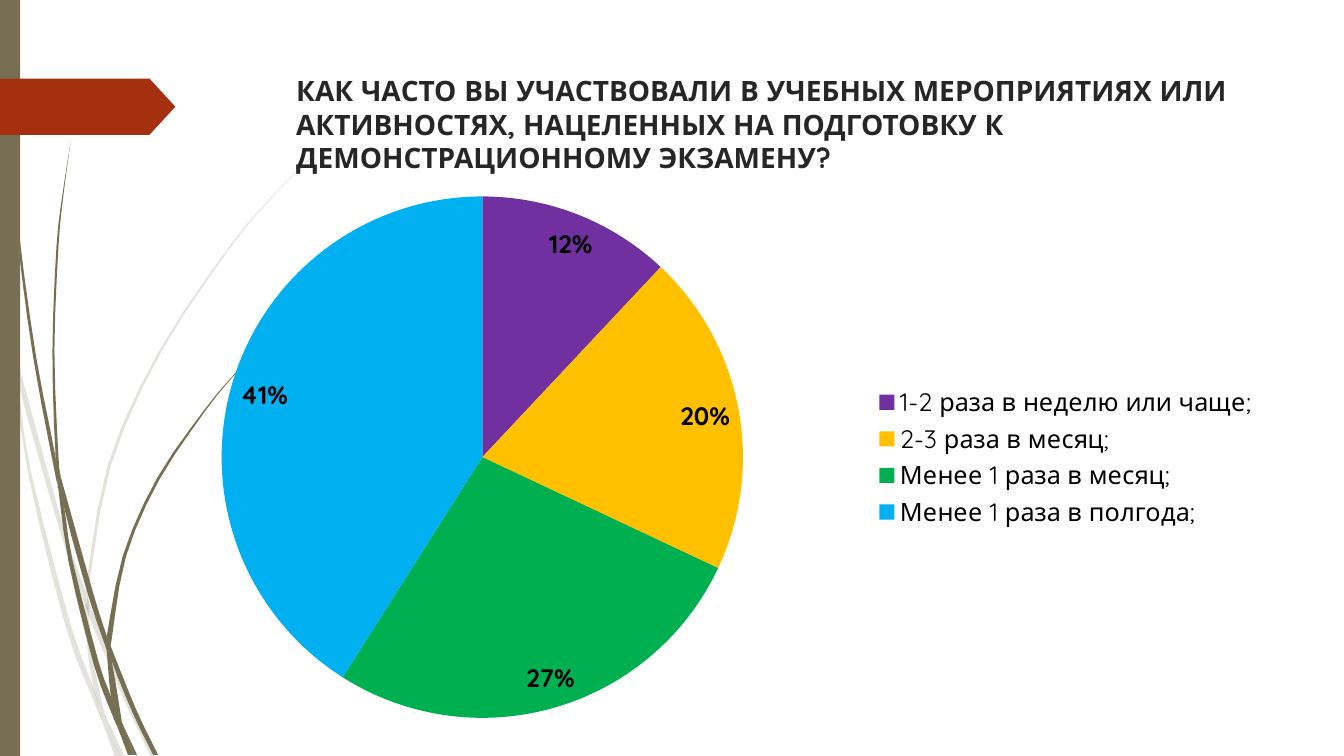
import collections

import lxml.etree
import pptx
import pptx.chart.data
import pptx.dml.color
import pptx.enum.chart
import pptx.enum.shapes
import pptx.enum.text
import pptx.oxml.ns
import pptx.util

Cm = pptx.util.Cm
Pt = pptx.util.Pt
RGB = pptx.dml.color.RGBColor.from_string
Box = collections.namedtuple("Box", "left top width height")
Theme = collections.namedtuple("Theme", "font olive rust heading body slices title_size chart_size")

THEME = Theme(
    font="Quicksand", olive="766F54", rust="A53010", heading="262626", body="000000",
    slices=("7030A0", "FFC000", "00B050", "00B0F0"),
    title_size=Pt(20), chart_size=Pt(18),
)
TITLE = ("КАК ЧАСТО ВЫ УЧАСТВОВАЛИ В УЧЕБНЫХ МЕРОПРИЯТИЯХ ИЛИ АКТИВНОСТЯХ, "
         "НАЦЕЛЕННЫХ НА ПОДГОТОВКУ К ДЕМОНСТРАЦИОННОМУ ЭКЗАМЕНУ?")
ANSWERS = {
    "1-2 раза в неделю или чаще;": 12,
    "2-3 раза в месяц;": 20,
    "Менее 1 раза в месяц;": 27,
    "Менее 1 раза в полгода;": 41,
}
GRID_ROWS = 7.5
CURVE_STEPS = 3
PALE_BLADES = (
    ([(0, 2.99), (.1, 3.44), (.11, 3.5)], [(0, 2.82), (.09, 3.22), (.11, 3.5)]),
    ([(.14, 3.45), (.17, 3.76), (.58, 5.22), (.84, 5.99)], [(.14, 3.45), (.62, 5.2), (.85, 5.86)]),
    ([(.88, 5.96), (.88, 6.1), (1.23, 6.94), (1.5, 7.51)],
     [(.88, 5.96), (.92, 6.07), (1.27, 6.92), (1.55, 7.51)]),
    ([(1.05, 7.11), (1.19, 7.51)], [(1.05, 7.11), (1.24, 7.51)]),
    ([(.11, 3.5), (.28, 4.7), (.65, 6.21), (.92, 6.93), (1.01, 7.14)],
     [(.11, 3.5), (.17, 3.76), (.31, 4.69), (.7, 6.19), (.93, 6.83), (.99, 7.07), (1.01, 7.14)]),
    ([(.84, 5.99), (.87, 6.46), (.93, 6.83), (.96, 6.92), (1.05, 7.11)],
     [(.84, 5.99), (.88, 6.08), (.91, 6.46), (1.03, 7.06), (1.05, 7.11)]),
    ([(3.12, 1.53), (2.89, 1.75), (2.68, 1.97), (2.28, 2.44), (1.58, 3.48), (1.07, 4.61), (.85, 5.84)],
     [(3.12, 1.54), (2.9, 1.75), (2.68, 1.98), (2.29, 2.45), (1.6, 3.49), (1.1, 4.62), (.88, 5.84), (.88, 5.96)]),
    ([(1.01, 7.14), (1.14, 7.51)], [(1.01, 7.14), (1.19, 7.51)]),
    ([(.85, 5.86), (.84, 5.99), (.88, 6.08)], [(.85, 5.86), (.88, 5.96), (.88, 6.1)]),
    ([(.93, 6.83), (.99, 7.07), (1.01, 7.14), (1.19, 7.51)],
     [(.93, 6.83), (.96, 6.92), (1.05, 7.11), (1.19, 7.51)]),
)
DARK_BLADES = (
    ([(.03, 0), (.03, .48), (.07, 1.1), (.17, 2.33), (.33, 3.55), (.56, 4.77), (.57, 4.81)],
     [(.03, 0), (.05, .48), (.08, 1.09), (.19, 2.32), (.36, 3.55), (.55, 4.53), (.57, 4.81)]),
    ([(.6, 4.72), (.64, 5.05), (.88, 5.92), (1.06, 6.45)], [(.6, 4.72), (.93, 5.9), (1.06, 6.31)]),
    ([(1.1, 6.41), (1.11, 6.56), (1.32, 7.08), (1.52, 7.49)],
     [(1.1, 6.41), (1.13, 6.49), (1.36, 7.06), (1.57, 7.49)]),
    ([(.57, 4.77), (.68, 5.57), (.93, 6.59), (1.11, 7.08), (1.17, 7.22)],
     [(.57, 4.77), (.64, 5.05), (.72, 5.56), (.98, 6.57), (1.1, 6.91), (1.16, 7.17), (1.17, 7.22)]),
    ([(.7, 1.41), (.62, 1.93), (.56, 2.45), (.52, 3.49), (.55, 4.49), (.6, 4.72)],
     [(.7, 1.41), (.63, 1.93), (.58, 2.45), (.54, 3.49), (.58, 4.53), (.6, 4.72)]),
    ([(1.22, 7.19), (1.33, 7.49)], [(1.22, 7.19), (1.36, 7.49)]),
    ([(.55, 4.49), (.57, 4.77), (.64, 5.05)], [(.55, 4.49), (.6, 4.72), (.64, 5.05)]),
    ([(2.6, 3.44), (2.45, 3.58), (2.31, 3.73), (2.04, 4.05), (1.56, 4.74), (1.22, 5.51), (1.06, 6.31)],
     [(2.61, 3.44), (2.46, 3.59), (2.31, 3.74), (2.05, 4.06), (1.58, 4.76), (1.25, 5.52), (1.11, 6.33), (1.1, 6.41)]),
    ([(1.17, 7.22), (1.27, 7.49)], [(1.17, 7.22), (1.31, 7.49)]),
    ([(1.06, 6.45), (1.1, 6.91), (1.16, 7.06), (1.22, 7.19)],
     [(1.06, 6.45), (1.11, 6.56), (1.21, 7.16), (1.22, 7.19)]),
    ([(1.06, 6.31), (1.06, 6.45), (1.11, 6.56)], [(1.06, 6.31), (1.1, 6.41), (1.11, 6.56)]),
    ([(1.1, 6.91), (1.17, 7.22), (1.3, 7.49)], [(1.1, 6.91), (1.16, 7.06), (1.22, 7.19), (1.33, 7.49)]),
)


def smooth(points):
    padded = [points[0], *points, points[-1]]
    curve = [points[0]]
    for a, b, c, d in zip(padded, padded[1:], padded[2:], padded[3:]):
        for step in range(1, CURVE_STEPS + 1):
            t = step / CURVE_STEPS
            curve.append(tuple(
                q + t * (r - p + t * (2 * p - 5 * q + 4 * r - s + t * (3 * q - p - 3 * r + s))) / 2
                for p, q, r, s in zip(a, b, c, d)))
    return curve


def paint(sp, color, opacity=100):
    sp.shadow.inherit = False
    sp.fill.solid()
    sp.fill.fore_color.rgb = RGB(color)
    sp.line.fill.background()
    if opacity < 100:
        clr = sp.fill._xPr.find(".//" + pptx.oxml.ns.qn("a:srgbClr"))
        lxml.etree.SubElement(clr, pptx.oxml.ns.qn("a:alpha"), val=str(opacity * 1000))


def add_blades(s, box, blades, opacity):
    unit = box.height / GRID_ROWS
    for left, right in blades:
        outline = smooth(left) + smooth(right)[::-1]
        points = [(round(box.left + x * unit), round(box.top + y * unit)) for x, y in outline]
        builder = s.shapes.build_freeform(*points[0])
        builder.add_line_segments(points[1:], close=True)
        paint(builder.convert_to_shape(), THEME.olive, opacity)


def add_side_decor(s, box):
    add_blades(s, box, PALE_BLADES, 20)
    add_blades(s, box, DARK_BLADES, 100)
    shapes = pptx.enum.shapes.MSO_SHAPE
    bar = s.shapes.add_shape(shapes.RECTANGLE, box.left, box.top, Cm(0.51), box.height)
    paint(bar, THEME.olive)
    banner = s.shapes.add_shape(shapes.PENTAGON, box.left, box.top + Cm(1.98), Cm(4.42), Cm(1.42))
    banner.adjustments[0] = 0.46
    paint(banner, THEME.rust)


def style_font(font, size, color, bold=False):
    font.name = THEME.font
    font.size = size
    font.bold = bold
    font.color.rgb = RGB(color)


def add_title(s, box):
    sp = s.shapes.title
    sp.left, sp.top, sp.width, sp.height = box
    tf = sp.text_frame
    tf.text = TITLE
    tf.word_wrap = True
    tf.auto_size = pptx.enum.text.MSO_AUTO_SIZE.NONE
    tf.vertical_anchor = pptx.enum.text.MSO_ANCHOR.TOP
    p = tf.paragraphs[0]
    p.alignment = pptx.enum.text.PP_ALIGN.LEFT
    style_font(p.font, THEME.title_size, THEME.heading, bold=True)


def add_answer_chart(s, box):
    data = pptx.chart.data.CategoryChartData()
    data.categories = list(ANSWERS)
    data.add_series("Series 1", list(ANSWERS.values()))
    chart = s.shapes.add_chart(pptx.enum.chart.XL_CHART_TYPE.PIE, *box, data).chart
    chart.has_title = False
    style_font(chart.font, THEME.chart_size, THEME.body)
    chart.has_legend = True
    chart.legend.position = pptx.enum.chart.XL_LEGEND_POSITION.RIGHT
    chart.legend.include_in_layout = False

    plot = chart.plots[0]
    plot.vary_by_categories = True
    for i, color in enumerate(THEME.slices):
        fmt = plot.series[0].points[i].format
        fmt.fill.solid()
        fmt.fill.fore_color.rgb = RGB(color)
        fmt.line.fill.background()
    plot.has_data_labels = True
    labels = plot.data_labels
    labels.show_value = False
    labels.show_percentage = True
    labels.number_format = "0%"
    labels.number_format_is_linked = False
    labels.position = pptx.enum.chart.XL_LABEL_POSITION.BEST_FIT
    style_font(labels.font, THEME.chart_size, THEME.body, bold=True)


def main():
    prs = pptx.Presentation()
    prs.slide_width, prs.slide_height = Cm(33.87), Cm(19.05)
    s = prs.slides.add_slide(prs.slide_layouts.get_by_name("Title Only"))
    add_side_decor(s, Box(0, 0, Cm(7.95), prs.slide_height))
    add_title(s, Box(Cm(7.21), Cm(1.73), Cm(24.77), Cm(3.56)))
    add_answer_chart(s, Box(Cm(2.36), Cm(4.6), Cm(29.59), Cm(13.84)))
    prs.save("out.pptx")


if __name__ == "__main__":
    main()
